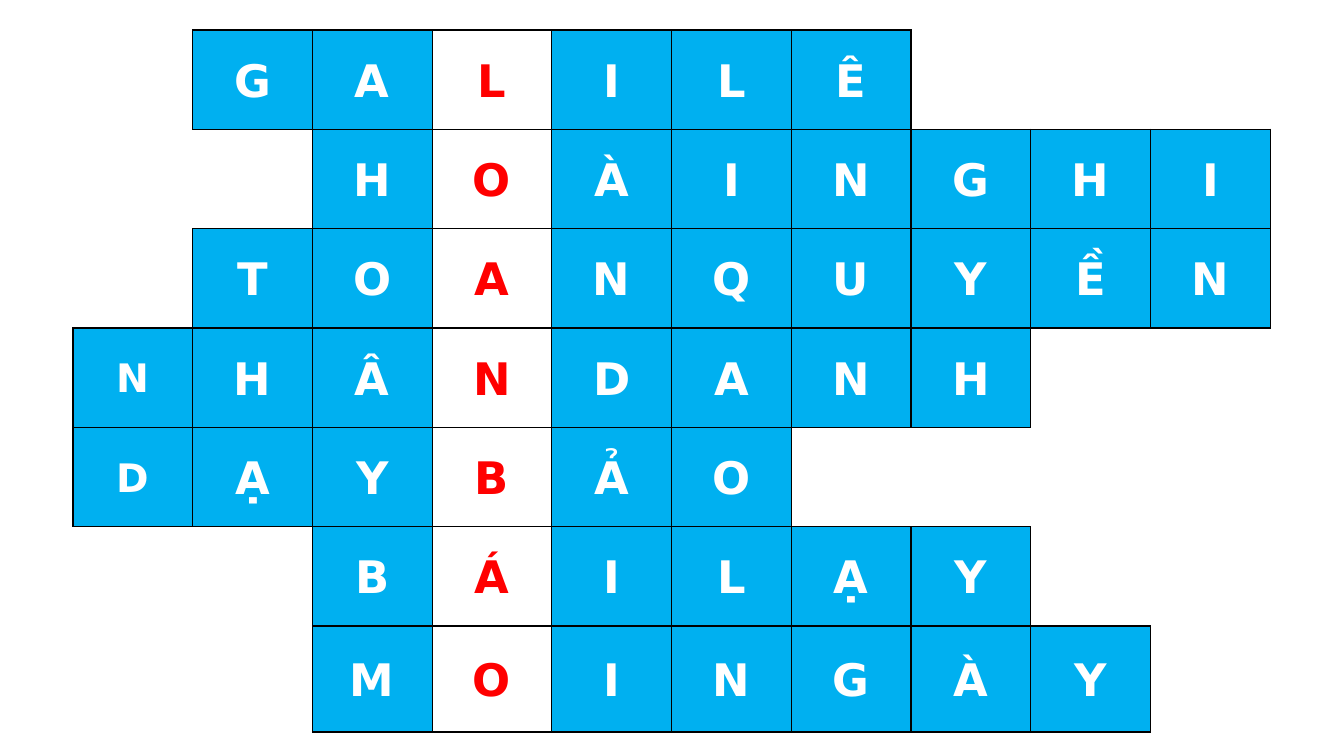
from dataclasses import dataclass

import lxml.etree
import pptx
import pptx.dml.color
import pptx.enum.text
import pptx.oxml.ns
import pptx.table
import pptx.util

EMU_PER_PX = 914400 / 100.8
SKY_BLUE = pptx.dml.color.RGBColor(0x00, 0xB0, 0xF0)
WHITE = pptx.dml.color.RGBColor(0xFF, 0xFF, 0xFF)
RED = pptx.dml.color.RGBColor(0xFF, 0x00, 0x00)
BLACK = pptx.dml.color.RGBColor(0x00, 0x00, 0x00)

FONT = "DejaVu Sans"
COLUMNS = 10
KEY_COLUMN = 3
LEFT, TOP, WIDTH = 73, 30, 1197
UPPER_ROWS_HEIGHT, LAST_ROW_HEIGHT = 596, 106
SIDES = {"a:lnL": (0, -1), "a:lnR": (0, 1), "a:lnT": (-1, 0), "a:lnB": (1, 0)}


@dataclass(frozen=True)
class Answer:
    start: int
    letters: str

    def letter_at(self, column: int) -> str:
        offset = column - self.start
        return self.letters[offset] if 0 <= offset < len(self.letters) else ""


ANSWERS = [
    Answer(1, "GALILÊ"),
    Answer(2, "HOÀINGHI"),
    Answer(1, "TOANQUYỀN"),
    Answer(0, "NHÂNDANH"),
    Answer(0, "DẠYBẢO"),
    Answer(2, "BÁILẠY"),
    Answer(2, "MOINGÀY"),
]


def px(length: int) -> pptx.util.Emu:
    return pptx.util.Emu(round(length * EMU_PER_PX))


def letter_at(row: int, column: int) -> str:
    return ANSWERS[row].letter_at(column) if 0 <= row < len(ANSWERS) else ""


def draw_borders(cell: pptx.table._Cell, row: int, column: int) -> None:
    """Line every side that touches a lettered square."""
    properties = cell._tc.get_or_add_tcPr()
    qn = pptx.oxml.ns.qn
    for tag, (down, across) in SIDES.items():
        line = lxml.etree.SubElement(properties, qn(tag), w=str(pptx.util.Pt(1)))
        if letter_at(row, column) or letter_at(row + down, column + across):
            fill = lxml.etree.SubElement(line, qn("a:solidFill"))
            lxml.etree.SubElement(fill, qn("a:srgbClr"), val=str(BLACK))
        else:
            lxml.etree.SubElement(line, qn("a:noFill"))


def fill_cell(cell: pptx.table._Cell, row: int, column: int) -> None:
    draw_borders(cell, row, column)
    letter = letter_at(row, column)
    is_key = column == KEY_COLUMN
    if letter and not is_key:
        cell.fill.solid()
        cell.fill.fore_color.rgb = SKY_BLUE
    else:
        cell.fill.background()
    if not letter:
        return

    cell.margin_left = cell.margin_right = px(7)
    cell.margin_top = cell.margin_bottom = 0
    cell.vertical_anchor = pptx.enum.text.MSO_ANCHOR.MIDDLE
    cell.text = letter
    para = cell.text_frame.paragraphs[0]
    para.alignment = pptx.enum.text.PP_ALIGN.CENTER
    para.line_spacing = 1.07
    para.font.name = FONT
    para.font.size = pptx.util.Pt(28 if column == 0 else 32)
    para.font.bold = True
    para.font.color.rgb = RED if is_key else WHITE


def main() -> None:
    deck = pptx.Presentation()
    deck.slide_width = pptx.util.Inches(13.33)
    deck.slide_height = pptx.util.Inches(7.5)
    page = deck.slides.add_slide(deck.slide_layouts[6])

    # Crossword grid
    frame = page.shapes.add_table(
        len(ANSWERS), COLUMNS, px(LEFT), px(TOP), px(WIDTH),
        px(UPPER_ROWS_HEIGHT + LAST_ROW_HEIGHT),
    )
    grid = frame.table
    grid.first_row = grid.horz_banding = False
    for grid_column in grid.columns:
        grid_column.width = px(WIDTH) // COLUMNS
    for grid_row in grid.rows:
        grid_row.height = px(UPPER_ROWS_HEIGHT) // (len(ANSWERS) - 1)
    grid.rows[len(ANSWERS) - 1].height = px(LAST_ROW_HEIGHT)

    # Answers and key word
    for row in range(len(ANSWERS)):
        for column in range(COLUMNS):
            fill_cell(grid.cell(row, column), row, column)

    deck.save("out.pptx")


if __name__ == "__main__":
    main()
